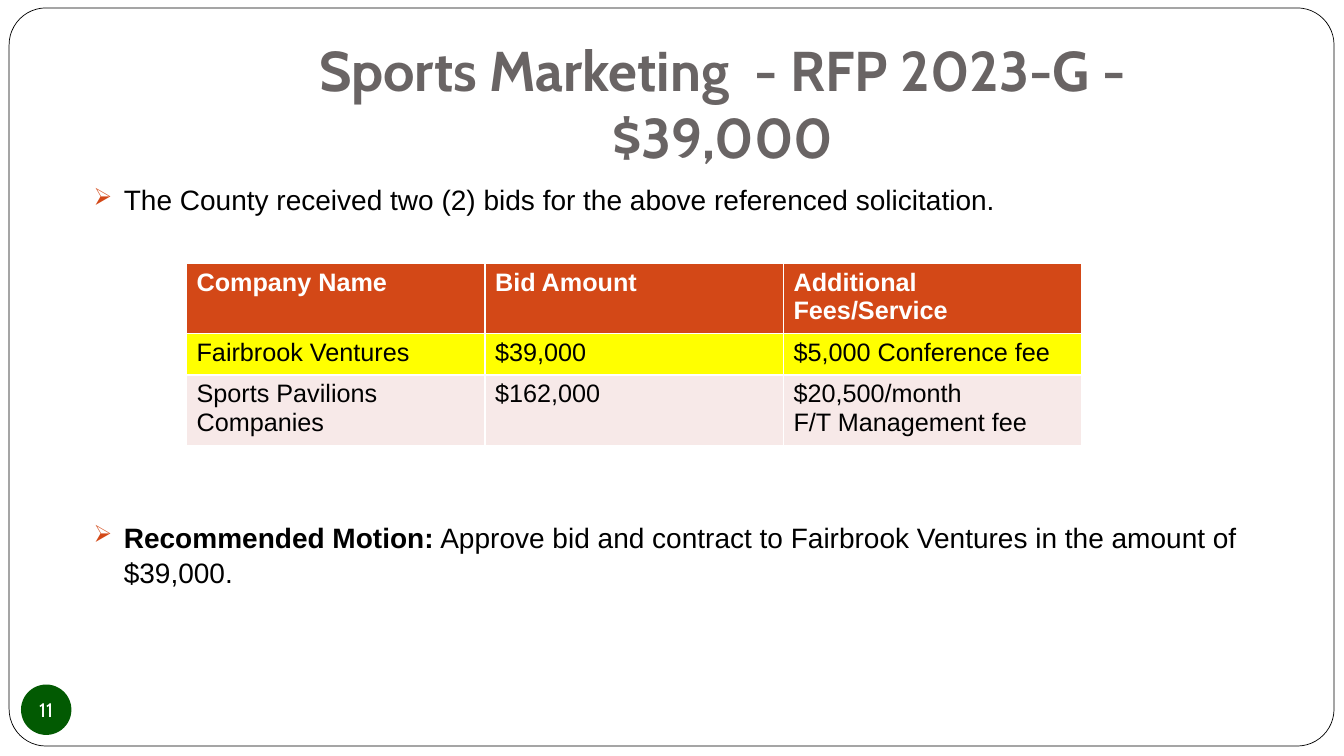
from dataclasses import dataclass
from typing import Any

from lxml.etree import SubElement
from pptx import Presentation
from pptx.dml.color import RGBColor
from pptx.enum.shapes import MSO_SHAPE
from pptx.enum.text import MSO_ANCHOR, MSO_AUTO_SIZE, PP_ALIGN
from pptx.oxml.ns import qn
from pptx.util import Cm, Pt

RUST, BLACK, WHITE = "D34817", "000000", "FFFFFF"


@dataclass
class Box:
    left: float
    top: float
    width: float
    height: float

    def place(self) -> tuple[Cm, Cm, Cm, Cm]:
        return Cm(self.left), Cm(self.top), Cm(self.width), Cm(self.height)


@dataclass
class Face:
    name: str
    size: int
    color: str
    bold: bool = False


@dataclass
class Point:
    lead: str
    text: str
    before: int


@dataclass
class Row:
    fill: str
    face: Face
    cells: tuple[str, str, str]


def tint(color: Any, code: str) -> None:
    color.rgb = RGBColor.from_string(code)


def paint(shape: Any, code: str) -> None:
    shape.fill.solid()
    tint(shape.fill.fore_color, code)


def assign(item: Any, values: dict[str, Any]) -> None:
    for name, value in values.items():
        setattr(item, name, value)


def style(font: Any, face: Face) -> None:
    assign(font, {"name": face.name, "size": Pt(face.size), "bold": face.bold})
    tint(font.color, face.color)


def add_shape(slide: Any, kind: MSO_SHAPE, box: Box, fill: str) -> Any:
    shape = slide.shapes.add_shape(kind, *box.place())
    shape.shadow.inherit = False
    paint(shape, fill)
    shape.line.fill.background()
    return shape


def add_bullet(para: Any) -> None:
    props = para._p.get_or_add_pPr()
    assign_xml = {"marL": Cm(0.76), "indent": -Cm(0.76)}
    for name, value in assign_xml.items():
        props.set(name, str(int(value)))
    color = SubElement(props, qn("a:buClr"))
    SubElement(color, qn("a:srgbClr"), val=RUST)
    SubElement(props, qn("a:buSzPct"), val="85000")
    SubElement(props, qn("a:buChar"), char="➢")


def add_points(slide: Any, box: Box, points: list[Point], face: Face) -> None:
    frame = slide.shapes.add_textbox(*box.place()).text_frame
    frame.word_wrap = True
    for i, point in enumerate(points):
        para = frame.add_paragraph() if i else frame.paragraphs[0]
        add_bullet(para)
        assign(para, {"space_after": Pt(6), "line_spacing": 1.05})
        if point.before:
            para.space_before = Pt(point.before)
        style(para.font, face)
        for text, bold in ((point.lead, True), (point.text, False)):
            if text:
                run = para.add_run()
                run.text = text
                style(run.font, face)
                run.font.bold = bold


def add_bids(slide: Any, box: Box, rows: list[Row]) -> None:
    count = len(rows[0].cells)
    table = slide.shapes.add_table(len(rows), count, *box.place()).table
    table.horz_banding = False
    for r, row in enumerate(rows):
        for c, text in enumerate(row.cells):
            cell = table.cell(r, c)
            cell.text = text
            paint(cell, row.fill)
            for para in cell.text_frame.paragraphs:
                for run in para.runs:
                    style(run.font, row.face)


def main() -> None:
    deck = Presentation()
    assign(deck, {"slide_width": Cm(33.86), "slide_height": Cm(19.05)})
    slide = deck.slides.add_slide(deck.slide_layouts[5])

    title = slide.shapes.title
    assign(title, dict(zip(("left", "top", "width", "height"),
                           Box(6.78, 0.76, 22.86, 3.68).place())))
    title.text = "Sports Marketing  - RFP 2023-G - $39,000"
    assign(title.text_frame, {
        "auto_size": MSO_AUTO_SIZE.NONE, "word_wrap": True,
        "vertical_anchor": MSO_ANCHOR.TOP, "margin_bottom": Cm(0.25)})
    head = title.text_frame.paragraphs[0]
    head.alignment = PP_ALIGN.CENTER
    style(head.runs[0].font, Face("Cabin", 40, "696464", True))

    border = add_shape(slide, MSO_SHAPE.ROUNDED_RECTANGLE,
                       Box(0.23, 0.2, 33.38, 18.6), WHITE)
    border.adjustments[0] = 0.05
    tint(border.line.color, BLACK)
    border.line.width = Pt(0.5)
    title.element.addprevious(border.element)

    add_points(slide, Box(2.11, 4.44, 29.64, 12.27), [
        Point("", "The County received two (2) bids for the above "
              "referenced solicitation.", 0),
        Point("Recommended Motion:", " Approve bid and contract to Fairbrook "
              "Ventures in the amount of $39,000.", 210),
    ], Face("Arial", 20, BLACK))

    badge = add_shape(slide, MSO_SHAPE.OVAL,
                      Box(0.53, 17.25, 1.27, 1.27), "025A02")
    sides = ("left", "top", "right", "bottom")
    assign(badge.text_frame, {f"margin_{side}": 0 for side in sides}
           | {"word_wrap": False, "vertical_anchor": MSO_ANCHOR.MIDDLE,
              "text": "11"})
    page = badge.text_frame.paragraphs[0]
    page.alignment = PP_ALIGN.CENTER
    style(page.runs[0].font, Face("Cabin", 14, WHITE))

    plain = Face("Arial", 18, BLACK)
    add_bids(slide, Box(4.7, 6.63, 22.56, 3.12), [
        Row(RUST, Face("Arial", 18, WHITE, True),
            ("Company Name", "Bid Amount", "Additional Fees/Service")),
        Row("FFFF00", plain,
            ("Fairbrook Ventures", "$39,000", "$5,000 Conference fee")),
        Row("F7E9E8", plain,
            ("Sports Pavilions Companies", "$162,000",
             "$20,500/month\nF/T Management fee")),
    ])
    deck.save("out.pptx")


if __name__ == "__main__":
    main()
